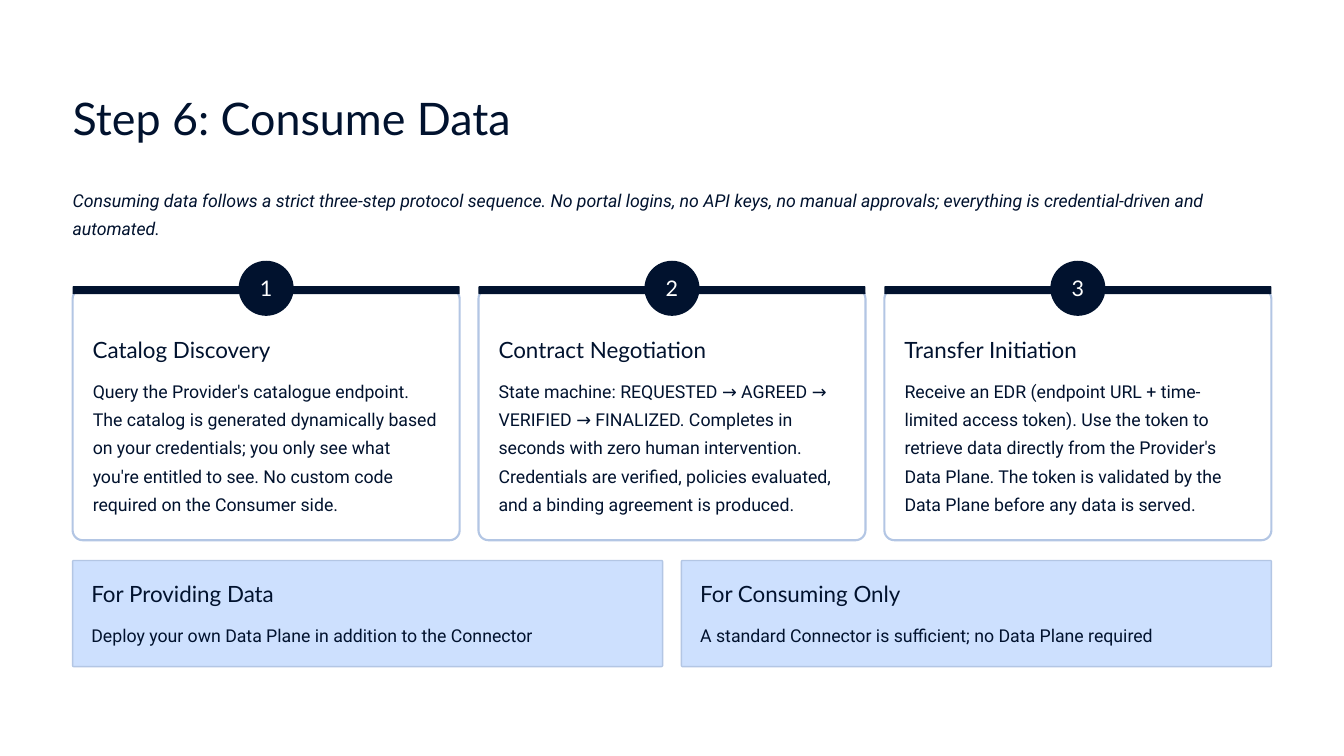
import dataclasses

import pptx
import pptx.dml.color
import pptx.enum.shapes
import pptx.enum.text
import pptx.util

Inches = pptx.util.Inches
Pt = pptx.util.Pt
Shape = pptx.enum.shapes.MSO_SHAPE
Align = pptx.enum.text.PP_ALIGN
Anchor = pptx.enum.text.MSO_ANCHOR


@dataclasses.dataclass(frozen=True)
class Theme:
    ink: str = "01122E"
    paper: str = "FFFFFF"
    panel: str = "CDE0FE"
    edge: str = "B3C6E4"
    heading_font: str = "Lato"
    body_font: str = "Roboto"
    title_size: float = 24
    heading_size: float = 12
    number_size: float = 11.5
    body_size: float = 9.5
    heading_spacing: float = 1.04
    body_spacing: float = 1.33


THEME = Theme()
LEFT, CONTENT_WIDTH, GAP = 0.54, 8.92, 0.14

STEPS = [
    ("Catalog Discovery",
     "Query the Provider's catalogue endpoint. The catalog is generated dynamically "
     "based on your credentials; you only see what you're entitled to see. "
     "No custom code required on the Consumer side."),
    ("Contract Negotiation",
     "State machine: REQUESTED → AGREED → VERIFIED → FINALIZED. Completes in seconds "
     "with zero human intervention. Credentials are verified, policies evaluated, "
     "and a binding agreement is produced."),
    ("Transfer Initiation",
     "Receive an EDR (endpoint URL + time-limited access token). Use the token to "
     "retrieve data directly from the Provider's Data Plane. The token is validated "
     "by the Data Plane before any data is served."),
]
OPTIONS = [
    ("For Providing Data", "Deploy your own Data Plane in addition to the Connector"),
    ("For Consuming Only", "A standard Connector is sufficient; no Data Plane required"),
]


def rgb(color):
    return pptx.dml.color.RGBColor.from_string(color)


def write(frame, text, font, size, spacing=1.0, color=THEME.ink, italic=False,
          align=Align.LEFT, anchor=Anchor.TOP):
    frame.margin_left = frame.margin_right = frame.margin_top = frame.margin_bottom = 0
    frame.word_wrap = True
    frame.auto_size = pptx.enum.text.MSO_AUTO_SIZE.NONE
    frame.vertical_anchor = anchor
    paragraph = frame.paragraphs[0]
    paragraph.alignment = align
    paragraph.line_spacing = spacing
    run = paragraph.add_run()
    run.text = text
    run.font.name = font
    run.font.size = Pt(size)
    run.font.italic = italic
    run.font.color.rgb = rgb(color)


def add_heading(slide, text, left, top):
    box = slide.shapes.add_textbox(Inches(left), Inches(top), Inches(1.7), Inches(0.21))
    write(box.text_frame, text, THEME.heading_font, THEME.heading_size,
          THEME.heading_spacing)


def add_body(slide, text, left, top, width, height, italic=False):
    box = slide.shapes.add_textbox(Inches(left), Inches(top), Inches(width), Inches(height))
    write(box.text_frame, text, THEME.body_font, THEME.body_size,
          THEME.body_spacing, italic=italic)


def add_block(slide, kind, left, top, width, height, fill, line_width=0, corner=None):
    block = slide.shapes.add_shape(
        kind, Inches(left), Inches(top), Inches(width), Inches(height))
    block.shadow.inherit = False
    block.fill.solid()
    block.fill.fore_color.rgb = rgb(fill)
    if line_width:
        block.line.color.rgb = rgb(THEME.edge)
        block.line.width = Pt(line_width)
    else:
        block.line.fill.background()
    if corner is not None:
        block.adjustments[0] = corner
    return block


def add_header(slide, left, top, width):
    title = slide.shapes.title
    title.left, title.top = Inches(left), Inches(top)
    title.width, title.height = Inches(4.01), Inches(0.42)
    write(title.text_frame, "Step 6: Consume Data", THEME.heading_font,
          THEME.title_size, THEME.heading_spacing)
    add_body(slide, "Consuming data follows a strict three-step protocol sequence. "
             "No portal logins, no API keys, no manual approvals; everything is "
             "credential-driven and automated.", left, top + 0.7, width, 0.43, italic=True)


def add_step_card(slide, number, heading, body, left, top, width, height):
    badge, pad = 0.41, 0.15
    add_block(slide, Shape.ROUNDED_RECTANGLE, left, top, width, height,
              THEME.paper, 1.12, 0.04)
    add_block(slide, Shape.ROUNDED_RECTANGLE, left, top - 0.02, width, 0.06,
              THEME.ink, corner=0.1)
    circle = add_block(slide, Shape.OVAL, left + (width - badge) / 2, top - 0.21,
                       badge, badge, THEME.ink)
    write(circle.text_frame, str(number), THEME.heading_font, THEME.number_size,
          color=THEME.paper, align=Align.CENTER, anchor=Anchor.MIDDLE)
    add_heading(slide, heading, left + pad, top + 0.34)
    add_body(slide, body, left + pad, top + 0.63, width - 2 * pad, 1.09)


def add_option_panel(slide, heading, body, left, top, width, height):
    pad = 0.14
    add_block(slide, Shape.ROUNDED_RECTANGLE, left, top, width, height,
              THEME.panel, 0.75, 0.01)
    add_heading(slide, heading, left + pad, top + pad)
    add_body(slide, body, left + pad, top + 0.43, width - 2 * pad, 0.22)


def columns(count):
    """Return the left edges and shared width of equal columns."""
    width = (CONTENT_WIDTH - GAP * (count - 1)) / count
    return [LEFT + i * (width + GAP) for i in range(count)], width


def main():
    deck = pptx.Presentation()
    deck.slide_width = Inches(10)
    deck.slide_height = deck.slide_width * 9 // 16
    slide = deck.slides.add_slide(deck.slide_layouts.get_by_name("Title Only"))
    slide.background.fill.solid()
    slide.background.fill.fore_color.rgb = rgb(THEME.paper)

    add_header(slide, LEFT, 0.66, CONTENT_WIDTH)
    lefts, width = columns(len(STEPS))
    for number, (left, (heading, body)) in enumerate(zip(lefts, STEPS), 1):
        add_step_card(slide, number, heading, body, left, 2.15, width, 1.87)
    lefts, width = columns(len(OPTIONS))
    for left, (heading, body) in zip(lefts, OPTIONS):
        add_option_panel(slide, heading, body, left, 4.17, width, 0.79)

    deck.save("out.pptx")


if __name__ == "__main__":
    main()
